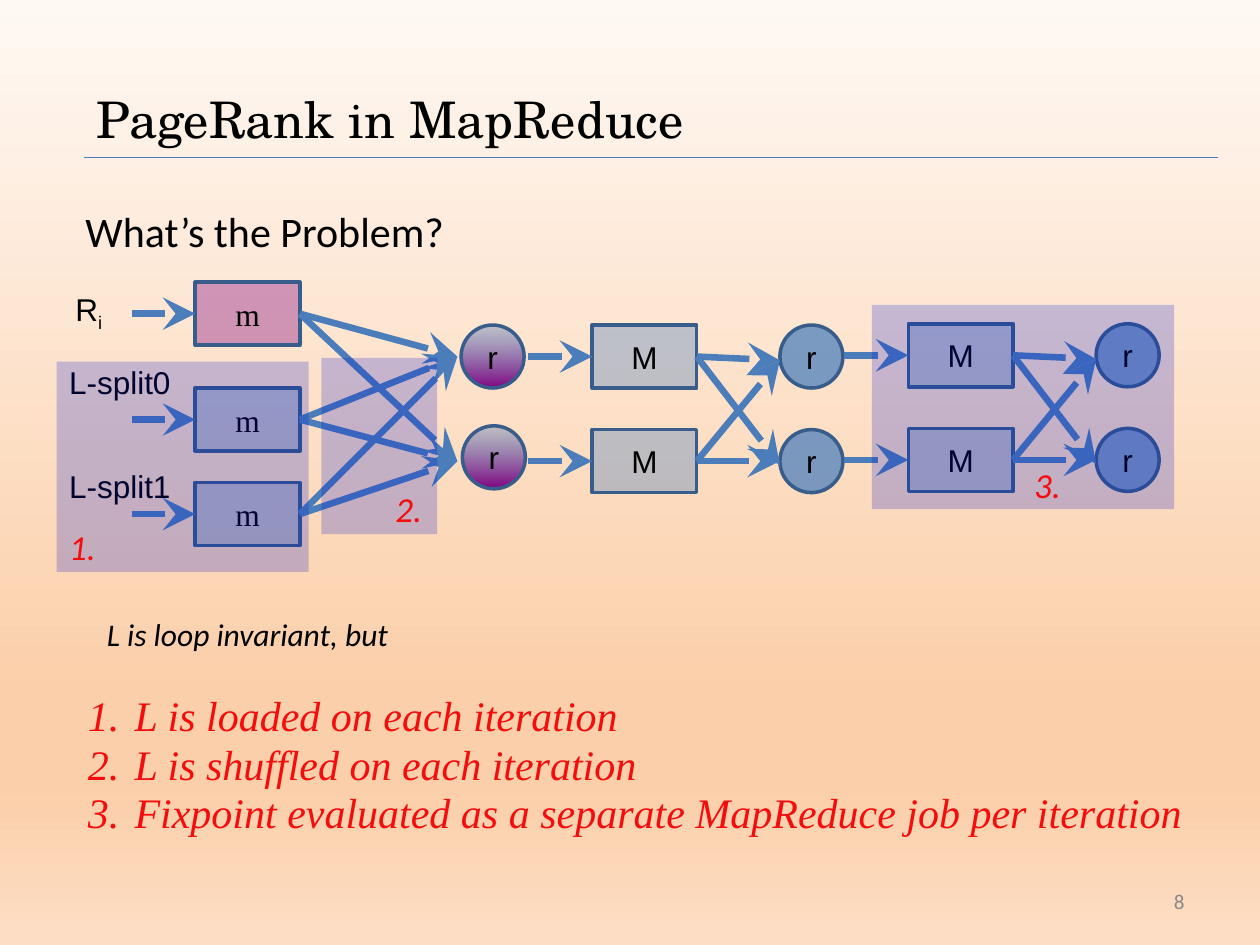
"""Build the slide "PageRank in MapReduce" with its dataflow diagram."""
from lxml.etree import SubElement
from pptx import Presentation
from pptx.dml.color import RGBColor
from pptx.enum.shapes import MSO_CONNECTOR, MSO_SHAPE as SHAPE
from pptx.enum.text import MSO_ANCHOR as ANCHOR, PP_ALIGN as ALIGN
from pptx.oxml.ns import qn
from pptx.util import Inches, Pt

COLORS = {
    "black": "000000", "red": "F30D0D", "gray": "888888", "purple": "800080",
    "blue": "4F81BD", "edge": "385D8A", "arrow": "4A7DBA", "veil": "0011CF",
    "bg_top": "FFF9F4", "bg_deep": "FBCFA9", "bg_end": "FDDEC5",
}
BACKGROUND = [(0, "bg_top", 100), (74, "bg_deep", 100),
              (83, "bg_deep", 100), (100, "bg_end", 100)]
REDUCER_FILL = [(0, "blue", 35), (100, "purple", 100)]

TITLE = "PageRank in MapReduce"
QUESTION = "What’s the Problem?"
LEAD = "L is loop invariant, but"
PROBLEMS = [
    "L is loaded on each iteration",
    "L is shuffled on each iteration",
    "Fixpoint evaluated as a separate MapReduce job per iteration",
]
PAGE = "8"

MAPPERS = [(2.49, "purple"), (3.33, "blue"), (4.08, "blue")]
REDUCERS = [(3.66, 2.58), (3.67, 3.38)]
REDUCER_INPUTS = [(3.63, 2.83), (3.63, 3.66)]
INPUTS = [("L-split0", 2.83), ("L-split1", 3.66)]
STAGES = [(4.69, 2.83), (7.2, 2.82)]
VEILS = [(0.45, 2.87, 2, 1.67), (2.55, 2.84, 0.92, 1.4), (6.92, 2.42, 2.4, 1.62)]
MARKS = [("1.", 0.45, 4.12), ("2.", 3.04, 3.82), ("3.", 8.11, 3.63)]

BOX_W, NODE, ROW_GAP = 0.83, 0.5, 0.83
ARROW_LEN, NODE_OFFSET, MAP_X = 0.5, 1.5, 1.55


def rgb(name):
    return RGBColor.from_string(COLORS[name])


def set_alpha(color, percent):
    SubElement(color, qn("a:alpha"), val=str(percent * 1000))


def set_gradient(fill, element, stops):
    fill.gradient()
    fill.gradient_angle = 270
    stop_list = next(element.iter(qn("a:gsLst")))
    for old in list(stop_list):
        stop_list.remove(old)
    for pos, name, alpha in stops:
        stop = SubElement(stop_list, qn("a:gs"), pos=str(pos * 1000))
        set_alpha(SubElement(stop, qn("a:srgbClr"), val=COLORS[name]), alpha)


def write(tf, text, size=18, font="Arial", color="black", italic=False,
          align=None, anchor=ANCHOR.TOP, sub=""):
    tf.word_wrap = True
    tf.vertical_anchor = anchor
    lines = [text] if isinstance(text, str) else text
    for i, line in enumerate(lines):
        p = tf.add_paragraph() if i else tf.paragraphs[0]
        p.alignment = align
        for part in filter(None, (line, sub)):
            r = p.add_run()
            r.text = part
            r.font.size, r.font.name, r.font.italic = Pt(size), font, italic
            r.font.color.rgb = rgb(color)
    if sub:
        r.font._element.set("baseline", "-25000")


def add_text(s, text, x, y, w, h, **style):
    tf = s.shapes.add_textbox(*map(Inches, (x, y, w, h))).text_frame
    write(tf, text, **style)
    return tf


def add_shape(s, kind, x, y, w, h, fill, alpha=100, text="", font="Arial"):
    sp = s.shapes.add_shape(kind, *map(Inches, (x, y, w, h)))
    sp.shadow.inherit = False
    if isinstance(fill, list):
        set_gradient(sp.fill, sp._element, fill)
    else:
        sp.fill.solid()
        sp.fill.fore_color.rgb = rgb(fill)
        set_alpha(next(sp._element.iter(qn("a:srgbClr"))), alpha)
    if text:
        sp.line.color.rgb, sp.line.width = rgb("edge"), Pt(2)
        write(sp.text_frame, text, font=font, align=ALIGN.CENTER, anchor=ANCHOR.MIDDLE)
    else:
        sp.line.fill.background()
    return sp


def add_box(s, text, x, mid, fill="blue", font="Arial"):
    return add_shape(s, SHAPE.FLOWCHART_PROCESS, x, mid - NODE / 2, BOX_W, NODE,
                     fill, 36, text, font)


def add_node(s, x, y, fill="blue"):
    add_shape(s, SHAPE.FLOWCHART_CONNECTOR, x, y, NODE, NODE, fill, 75, "r")


def add_line(s, start, end, width=3.75, head=True):
    """Draw a line between points; a box stands for its facing side."""
    ends = [pt if isinstance(pt, tuple) else (0, 0) for pt in (start, end)]
    line = s.shapes.add_connector(MSO_CONNECTOR.STRAIGHT,
                                  *(Inches(v) for pt in ends for v in pt))
    if not isinstance(start, tuple):
        line.begin_connect(start, 3)
    if not isinstance(end, tuple):
        line.end_connect(end, 1)
    line.line.color.rgb, line.line.width = rgb("arrow"), Pt(width)
    if head:
        SubElement(line.line._get_or_add_ln(), qn("a:tailEnd"),
                   type="stealth", w="lg", len="lg")
    SubElement(line._element.spPr, qn("a:effectLst"))


def add_first_job(s):
    for mid, fill in MAPPERS:
        box = add_box(s, "m", MAP_X, mid, fill, "Times New Roman")
        add_line(s, (MAP_X - ARROW_LEN, mid), box)
        for target in REDUCER_INPUTS:
            add_line(s, box, target)
    for x, y in REDUCERS:
        add_node(s, x, y, REDUCER_FILL)
    add_text(s, "R", 0.5, 2.25, 0.5, 0.4, sub="i")
    for label, y in INPUTS:
        add_text(s, label, 0.45, y, 1.17, 0.4)


def add_stage(s, x, top):
    rows = [top, top + ROW_GAP]
    node_x = x + NODE_OFFSET
    boxes = [add_box(s, "M", x + 0.01, mid) for mid in rows]
    for box, mid in zip(boxes, rows):
        add_node(s, node_x, mid - NODE / 2)
        add_line(s, (x - ARROW_LEN, mid), box)
    for i, box in enumerate(boxes):
        for j, mid in enumerate(rows):
            shift = 0 if i and j else 0.03
            add_line(s, box, (node_x, mid + shift))


def add_problems(s):
    tf = add_text(s, PROBLEMS, 0.6, 5.5, 9.4, 1.33, size=24,
                  font="Times New Roman", color="red", italic=True)
    for i, p in enumerate(tf.paragraphs):
        p.line_spacing = 0.8
        p.space_before = Pt(4.8 if i else 0)
        pPr = p._p.get_or_add_pPr()
        pPr.set("marL", str(Inches(0.37)))
        pPr.set("indent", str(-Inches(0.37)))
        SubElement(SubElement(pPr, qn("a:buClr")), qn("a:srgbClr"), val=COLORS["red"])
        SubElement(pPr, qn("a:buFont"), typeface="Times New Roman")
        SubElement(pPr, qn("a:buAutoNum"), type="arabicPeriod")


def main():
    prs = Presentation()
    prs.slide_width, prs.slide_height = Inches(10), Inches(7.5)
    s = prs.slides.add_slide(prs.slide_layouts[6])
    set_gradient(s.background.fill, s._element, BACKGROUND)

    add_text(s, TITLE, 0.67, 0.64, 9.24, 0.59, size=28.8,
             font="TeX Gyre Schola", anchor=ANCHOR.MIDDLE)
    add_line(s, (0.67, 1.25), (9.67, 1.25), width=0.75, head=False)
    add_text(s, QUESTION, 0.58, 1.58, 3.32, 0.5, size=24, font="Calibri")

    add_first_job(s)
    for x, top in STAGES:
        add_stage(s, x, top)
    for area in VEILS:
        add_shape(s, SHAPE.RECTANGLE, *area, "veil", 22)
    for mark, x, y in MARKS:
        add_text(s, mark, x, y, 0.5, 0.43, size=20, font="Calibri",
                 color="red", italic=True)

    add_text(s, LEAD, 0.75, 4.83, 3.26, 0.5, font="Calibri", italic=True)
    add_problems(s)
    add_text(s, PAGE, 7.17, 6.95, 2.33, 0.4, size=12, font="Calibri",
             color="gray", align=ALIGN.RIGHT, anchor=ANCHOR.MIDDLE)
    prs.save("out.pptx")


if __name__ == "__main__":
    main()
